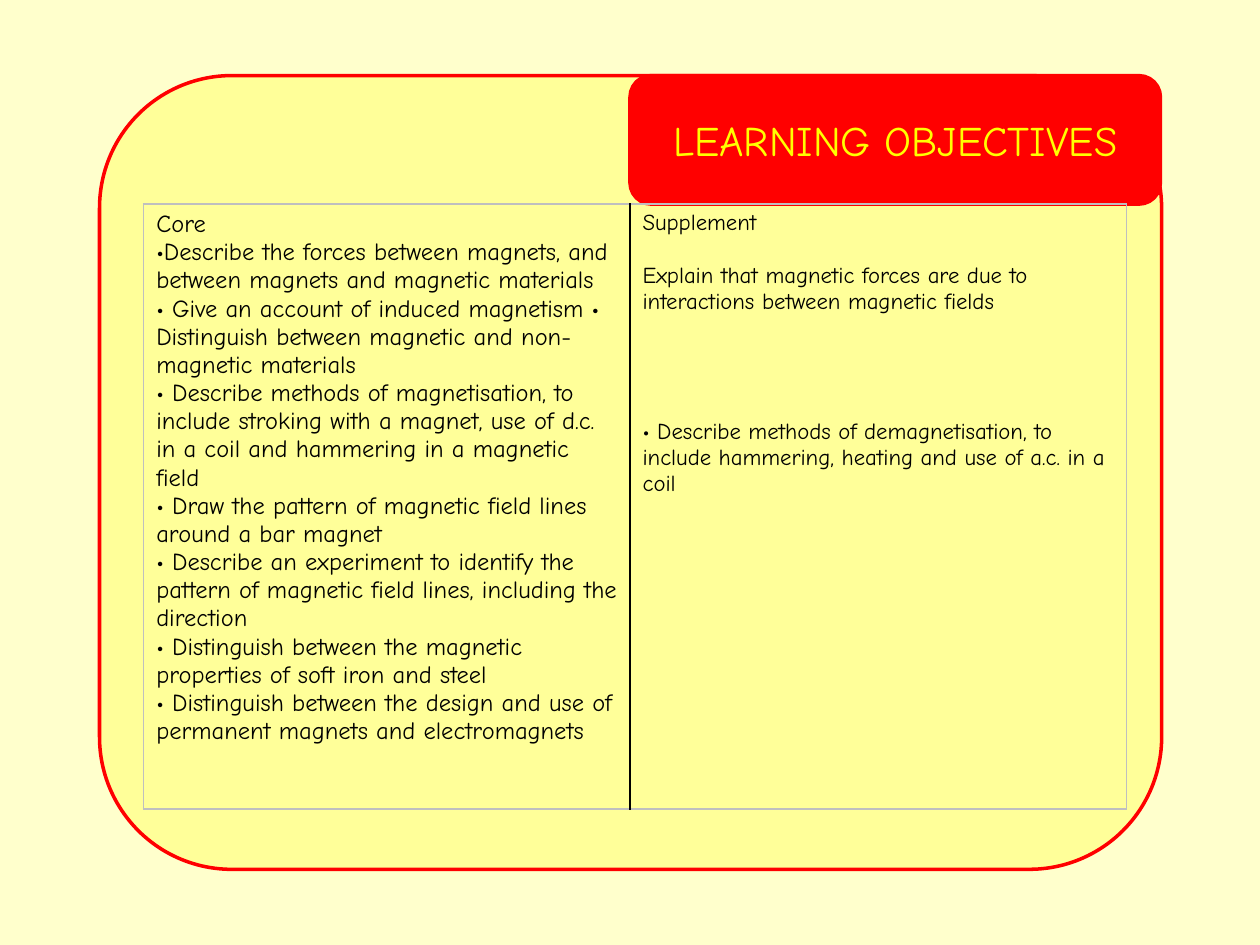
from pptx import Presentation
from pptx.dml.color import RGBColor
from pptx.enum.shapes import MSO_SHAPE
from pptx.enum.text import MSO_ANCHOR, PP_ALIGN
from pptx.oxml import parse_xml
from pptx.oxml.ns import nsdecls
from pptx.util import Inches, Pt

RECT, ROUND = MSO_SHAPE.RECTANGLE, MSO_SHAPE.ROUNDED_RECTANGLE
CENTER, MIDDLE = PP_ALIGN.CENTER, MSO_ANCHOR.MIDDLE
FONT = "Comic Neue"
COLORS = {"cream": "FFFFCC", "pale": "FFFF99", "red": "FF0000",
          "yellow": "FFFF00", "black": "000000", "grey": "BFBFBF"}

TAB = (5, 0.6, 4.21, 1.02)
TABLE = (1.14, 1.62, 7.8, 4.8)
WIDTHS = (3.86, 3.94)

# Each entry is a paragraph and the space before it in points.
CORE = [(text, 0) for text in (
    "Core",
    "•Describe the forces between magnets, and between magnets and magnetic materials",
    "• Give an account of induced magnetism • Distinguish between magnetic and "
    "non-magnetic materials",
    "• Describe methods of magnetisation, to include stroking with a magnet, "
    "use of d.c. in a coil and hammering in a magnetic field",
    "• Draw the pattern of magnetic field lines around a bar magnet",
    "• Describe an experiment to identify the pattern of magnetic field lines, "
    "including the direction",
    "• Distinguish between the magnetic properties of soft iron and steel",
    "• Distinguish between the design and use of permanent magnets and electromagnets",
)]
EXTRA = [
    ("Supplement", 0),
    ("Explain that magnetic forces are due to interactions between magnetic fields", 15),
    ("• Describe methods of demagnetisation, to include hammering, heating and "
     "use of a.c. in a coil", 59.5),
]


def color(name):
    return RGBColor.from_string(COLORS[name])


def inches(box):
    return [Inches(value) for value in box]


def style(font, size, tint):
    for key, value in {"name": FONT, "size": Pt(size), "bold": False}.items():
        setattr(font, key, value)
    font.color.rgb = color(tint)


def add_panel(slide, kind, box, fill, line=None):
    panel = slide.shapes.add_shape(kind, *inches(box))
    panel.shadow.inherit = False
    panel.fill.solid()
    panel.fill.fore_color.rgb = color(fill)
    if line:
        panel.line.color.rgb = color(line)
        panel.line.width = Pt(2)
    else:
        panel.line.fill.background()


def set_title(slide, text, box):
    """Fill the title and bring it in front of its tab."""
    title = slide.shapes.title
    for key, value in zip(("left", "top", "width", "height"), inches(box)):
        setattr(title, key, value)
    frame = title.text_frame
    frame.text = text
    frame.word_wrap = True
    frame.vertical_anchor = MIDDLE
    para = frame.paragraphs[0]
    para.alignment = CENTER
    style(para.runs[0].font, 24, "yellow")
    slide.shapes._spTree.append(title._element)


def set_borders(cell, tints):
    """Draw the left, right, top and bottom edges in the given tints."""
    props = cell._tc.get_or_add_tcPr()
    for spot, (side, tint) in enumerate(zip("LRTB", tints)):
        props.insert(spot, parse_xml(
            f'<a:ln{side} {nsdecls("a")} w="12700"><a:solidFill>'
            f'<a:srgbClr val="{COLORS[tint]}"/></a:solidFill></a:ln{side}>'))


def fill_cell(cell, items, size, tints):
    cell.fill.background()
    set_borders(cell, tints)
    frame = cell.text_frame
    frame.text = "\n".join(text for text, gap in items)
    for para, (text, gap) in zip(frame.paragraphs, items):
        para.space_before = Pt(gap)
        style(para.runs[0].font, size, "black")


def add_goals(slide):
    table = slide.shapes.add_table(1, 2, *inches(TABLE)).table
    table.first_row = table.horz_banding = False
    for column, width in zip(table.columns, WIDTHS):
        column.width = Inches(width)
    fill_cell(table.cell(0, 0), CORE, 14, ("grey", "black", "grey", "grey"))
    fill_cell(table.cell(0, 1), EXTRA, 13, ("black", "grey", "grey", "grey"))


def main():
    deck = Presentation()
    deck.slide_width, deck.slide_height = Inches(10), Inches(7.5)
    slide = deck.slides.add_slide(deck.slide_layouts[5])
    back = slide.background.fill
    back.solid()
    back.fore_color.rgb = color("pale")
    add_panel(slide, RECT, (0, 0, 10, 7.5), "cream")
    add_panel(slide, ROUND, (0.79, 0.6, 8.43, 6.3), "pale", "red")
    add_panel(slide, ROUND, TAB, "red", "red")
    set_title(slide, "LEARNING OBJECTIVES", TAB)
    add_goals(slide)
    deck.save("out.pptx")


if __name__ == "__main__":
    main()
